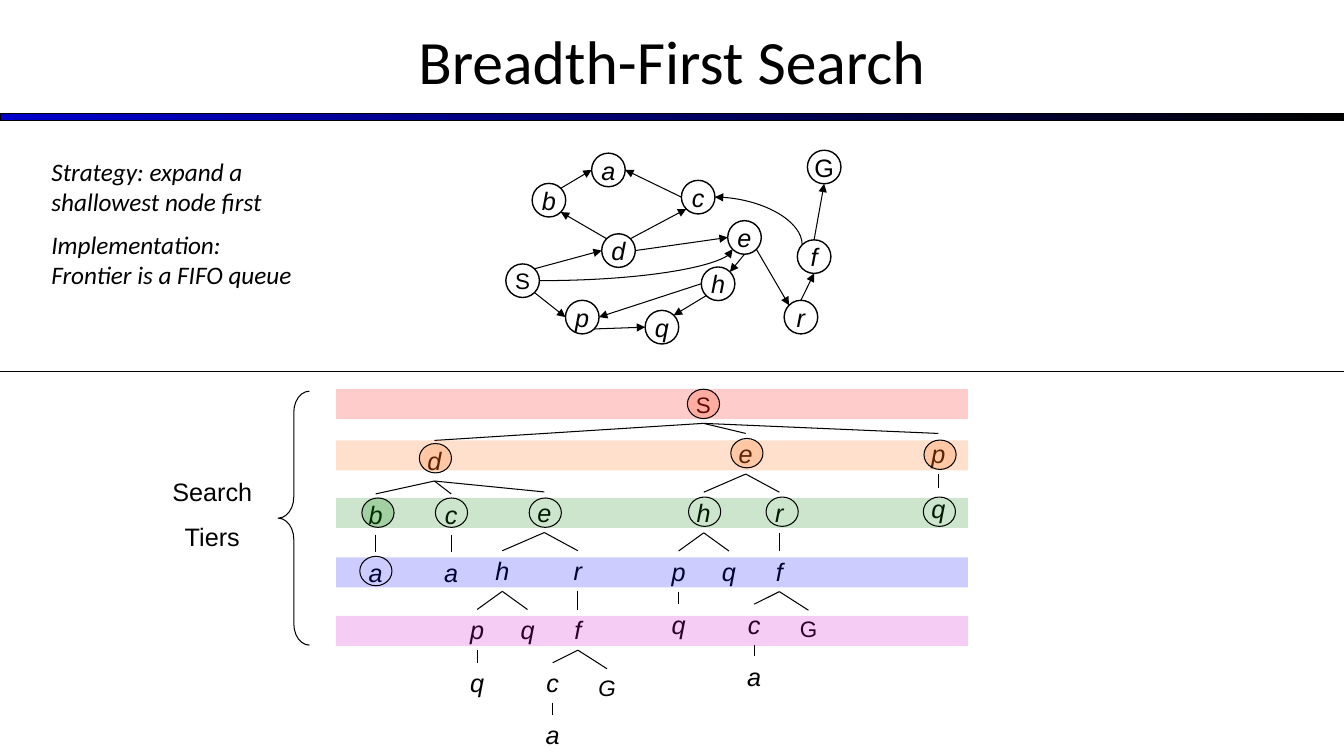
"""Build the breadth-first search slide."""
from dataclasses import dataclass
from math import sqrt

from lxml import etree
from pptx import Presentation
from pptx.dml.color import RGBColor
from pptx.enum.shapes import MSO_CONNECTOR, MSO_SHAPE
from pptx.enum.text import MSO_ANCHOR, MSO_AUTO_SIZE, PP_ALIGN
from pptx.oxml.ns import qn
from pptx.util import Pt

STRAIGHT, CURVE = MSO_CONNECTOR.STRAIGHT, MSO_CONNECTOR.CURVE
RECTANGLE, ELLIPSE = MSO_SHAPE.RECTANGLE, MSO_SHAPE.OVAL
NODE, BRACE = MSO_SHAPE.FLOWCHART_CONNECTOR, MSO_SHAPE.LEFT_BRACE
TOP, MIDDLE = MSO_ANCHOR.TOP, MSO_ANCHOR.MIDDLE
LEFT, CENTER = PP_ALIGN.LEFT, PP_ALIGN.CENTER
FIXED = MSO_AUTO_SIZE.NONE


@dataclass(frozen=True)
class Theme:
    """Colours, fonts and sizes of the slide."""
    ink: str = "000000"
    bar: str = "0000CC"
    red: str = "FF0000"
    start: str = "FF3300"
    orange: str = "FF6600"
    green: str = "008000"
    blue: str = "0000FF"
    purple: str = "CC00CC"
    heading_font: str = "Calibri"
    label_font: str = "Arial"
    title: int = 44
    text: int = 18
    small: int = 16
    thin: float = 0.75
    node_line: float = 1


@dataclass(frozen=True)
class Branch:
    """A search tree node, placed relative to its parent."""
    label: str
    across: float
    down: float
    children: tuple = ()
    italic: bool = True
    size: int = Theme.text


THEME = Theme()
NODE_SIZE = 24
GRAPH_NODES = {
    "S": (361.3, 188.5), "G": (576.7, 107.3), "d": (429.8, 167), "b": (380.1, 131),
    "p": (403.9, 214.5), "q": (460.8, 221.7), "c": (486.7, 128.8), "e": (519.8, 157.6),
    "h": (500.9, 190.7), "a": (422.6, 109.4), "f": (569.5, 171.3), "r": (560.1, 214.5),
}
GRAPH_EDGES = [
    ("S", "bottom right", "p", "left"), ("p", "bottom right", "q", "left"),
    ("h", "bottom left", "q", "top right"), ("h", "left", "p", "right"),
    ("e", "bottom", "h", "top right"), ("e", "bottom right", "r", "top left"),
    ("r", "top", "f", "bottom"), ("f", "top", "G", "bottom"),
    ("S", "top right", "d", "left"), ("d", "top left", "b", "bottom right"),
    ("b", "top right", "a", "left"), ("c", "left", "a", "right"),
    ("d", "top right", "c", "bottom left"), ("d", "right", "e", "left"),
]
TIERS = [(278, THEME.red), (314.6, THEME.orange), (355.7, THEME.green),
         (398.2, THEME.blue), (440, THEME.purple)]
RINGS = [
    (491, 278, THEME.start), (299.5, 316.8, THEME.orange), (522, 313.2, THEME.orange),
    (660, 314.3, THEME.orange), (258.5, 355.7, THEME.green), (311, 355.7, None),
    (378, 355.7, None), (491.8, 355, None), (547.2, 355, None), (659.5, 355, None),
    (257, 397.4, None),
]


def expand_e(across, down, goal_italic):
    """Return the subtree that grows from node e."""
    goal = Branch("G", 20.8, 42.3, italic=goal_italic, size=THEME.small)
    end = Branch("c", -18, 38, (Branch("a", 0, 37),))
    h_branch = Branch("h", -30, 42, (Branch("p", -18, 42, (Branch("q", 0, 38),)),
                                     Branch("q", 18, 42)))
    r_branch = Branch("r", 24, 42, (Branch("f", 0, 42, (end, goal)),))
    return Branch("e", across, down, (h_branch, r_branch))


def add_run(paragraph, text, font, size, italic=False):
    """Add one formatted run to a paragraph."""
    run = paragraph.add_run()
    run.text = text
    run.font.name, run.font.size, run.font.italic = font, Pt(size), italic
    run.font.color.rgb = RGBColor.from_string(THEME.ink)


def fill_text(shape, lines, font, size, italic=False, align=CENTER, anchor=TOP, gap=0):
    """Write lines as paragraphs with a gap between them."""
    frame = shape.text_frame
    frame.word_wrap, frame.auto_size, frame.vertical_anchor = True, FIXED, anchor
    for index, line in enumerate(lines):
        paragraph = frame.add_paragraph() if index else frame.paragraphs[0]
        paragraph.alignment = align
        paragraph.space_before = Pt(gap if index else 0)
        add_run(paragraph, line, font, size, italic)


def place(shape, left, top, width, height):
    """Move and size a placeholder."""
    shape.left, shape.top, shape.width, shape.height = map(Pt, (left, top, width, height))


def add_textbox(slide, box, lines, size, italic=False, gap=0):
    """Add centred label text."""
    shape = slide.shapes.add_textbox(*map(Pt, box))
    fill_text(shape, lines, THEME.label_font, size, italic, gap=gap)


def add_figure(slide, kind, box, fill=None, line=None):
    """Add a preset shape with an optional translucent fill and outline."""
    shape = slide.shapes.add_shape(kind, *map(Pt, box))
    shape.shadow.inherit = False
    if fill:
        shape.fill.solid()
        shape.fill.fore_color.rgb = RGBColor.from_string(fill)
        colour = shape.element.spPr.find(".//" + qn("a:srgbClr"))
        etree.SubElement(colour, qn("a:alpha"), val="20000")
    else:
        shape.fill.background()
    if line:
        shape.line.color.rgb = RGBColor.from_string(THEME.ink)
        shape.line.width = Pt(line)
    else:
        shape.line.fill.background()
    return shape


def add_line(slide, start, end, arrow=None, kind=STRAIGHT):
    """Add a thin connector; arrow is headEnd, tailEnd or None."""
    connector = slide.shapes.add_connector(kind, *map(Pt, (*start, *end)))
    connector.line.color.rgb = RGBColor.from_string(THEME.ink)
    connector.line.width = Pt(THEME.thin)
    properties = connector.element.spPr
    if arrow:
        etree.SubElement(properties.find(qn("a:ln")), qn(f"a:{arrow}"), type="triangle")
    if kind == CURVE:
        properties.find(qn("a:prstGeom")).set("prst", "curvedConnector2")
    etree.SubElement(properties, qn("a:effectLst"))


def rim_point(label, side):
    """Return the point on a graph node's rim at the named side."""
    across = ("right" in side) - ("left" in side)
    down = ("bottom" in side) - ("top" in side)
    reach = NODE_SIZE / 2 / sqrt(across ** 2 + down ** 2)
    left, top = GRAPH_NODES[label]
    return left + NODE_SIZE / 2 + across * reach, top + NODE_SIZE / 2 + down * reach


def add_graph(slide):
    """Draw the state graph."""
    for label, (left, top) in GRAPH_NODES.items():
        node = add_figure(slide, NODE, (left, top, NODE_SIZE, NODE_SIZE), line=THEME.node_line)
        size = THEME.small if label == "S" else THEME.text
        fill_text(node, [label], THEME.label_font, size, label.islower(), anchor=MIDDLE)
        node.text_frame.word_wrap = False
    for source, source_side, target, target_side in GRAPH_EDGES:
        add_line(slide, rim_point(source, source_side), rim_point(target, target_side), "tailEnd")
    add_line(slide, rim_point("c", "right"), rim_point("f", "top left"), "headEnd", CURVE)
    add_line(slide, rim_point("S", "right"), rim_point("e", "bottom left"), "tailEnd", CURVE)


def add_branch(slide, branch, center=0, top=0):
    """Draw a search tree node and everything below it."""
    center, top = center + branch.across, top + branch.down
    height = 29 if branch.size == THEME.text else 26.6
    add_textbox(slide, (center - 15, top, 30, height), [branch.label], branch.size, branch.italic)
    for child in branch.children:
        add_line(slide, (center, top + height), (center + child.across, top + child.down))
        add_branch(slide, child, center, top)


def add_tiers(slide):
    """Draw the tier bands, their brace and the rings of visited nodes."""
    for top, colour in TIERS:
        add_figure(slide, RECTANGLE, (240, top, 451.3, 21.5), colour)
    brace = add_figure(slide, BRACE, (198.7, 279.4, 22.3, 181.4), line=THEME.thin)
    brace.adjustments[0] = 0.68
    add_textbox(slide, (113.8, 337, 75.6, 62), ["Search", "Tiers"], THEME.text, gap=10)
    for left, top, colour in RINGS:
        add_figure(slide, ELLIPSE, (left, top, 23, 21), colour, THEME.thin)


def add_heading(slide):
    """Set the title, the gradient bar and the strategy text."""
    title, body = slide.shapes.title, slide.placeholders[1]
    place(title, 0, -2, 960, 90)
    fill_text(title, ["Breadth-First Search"], THEME.heading_font, THEME.title, anchor=MIDDLE)
    bar = add_figure(slide, RECTANGLE, (0, 81.4, 960, 5), line=THEME.thin)
    bar.fill.gradient()
    bar.fill.gradient_angle = 0
    for stop, colour in zip(bar.fill.gradient_stops, (THEME.bar, THEME.ink)):
        stop.color.rgb = RGBColor.from_string(colour)
    place(body, 29.5, 108, 187, 105)
    lines = ["Strategy: expand a shallowest node first", "Implementation: Frontier is a FIFO queue"]
    fill_text(body, lines, THEME.heading_font, THEME.text, True, LEFT, gap=9)
    for paragraph in body.text_frame.paragraphs:
        properties = paragraph._p.get_or_add_pPr()
        properties.set("marL", "0")
        properties.set("indent", "0")
        etree.SubElement(properties, qn("a:buNone"))


def main():
    """Build and save the slide."""
    presentation = Presentation()
    presentation.slide_width, presentation.slide_height = Pt(960), Pt(540)
    slide = presentation.slides.add_slide(presentation.slide_layouts[1])
    add_heading(slide)
    d_branch = Branch("d", -192.2, 38.8, (
        Branch("b", -42, 38.2, (Branch("a", 0, 41.8),)),
        Branch("c", 12, 38.2, (Branch("a", 0, 41.8),)), expand_e(78.5, 36.8, True)))
    p_branch = Branch("p", 167.8, 33.8, (Branch("q", 0, 39),))
    add_branch(slide, Branch("S", 502.5, 275.8, (d_branch, expand_e(30.2, 33.8, False), p_branch),
                             False, THEME.small))
    add_graph(slide)
    add_tiers(slide)
    add_line(slide, (0, 265.7), (960, 265.7))
    presentation.save("out.pptx")


if __name__ == "__main__":
    main()
